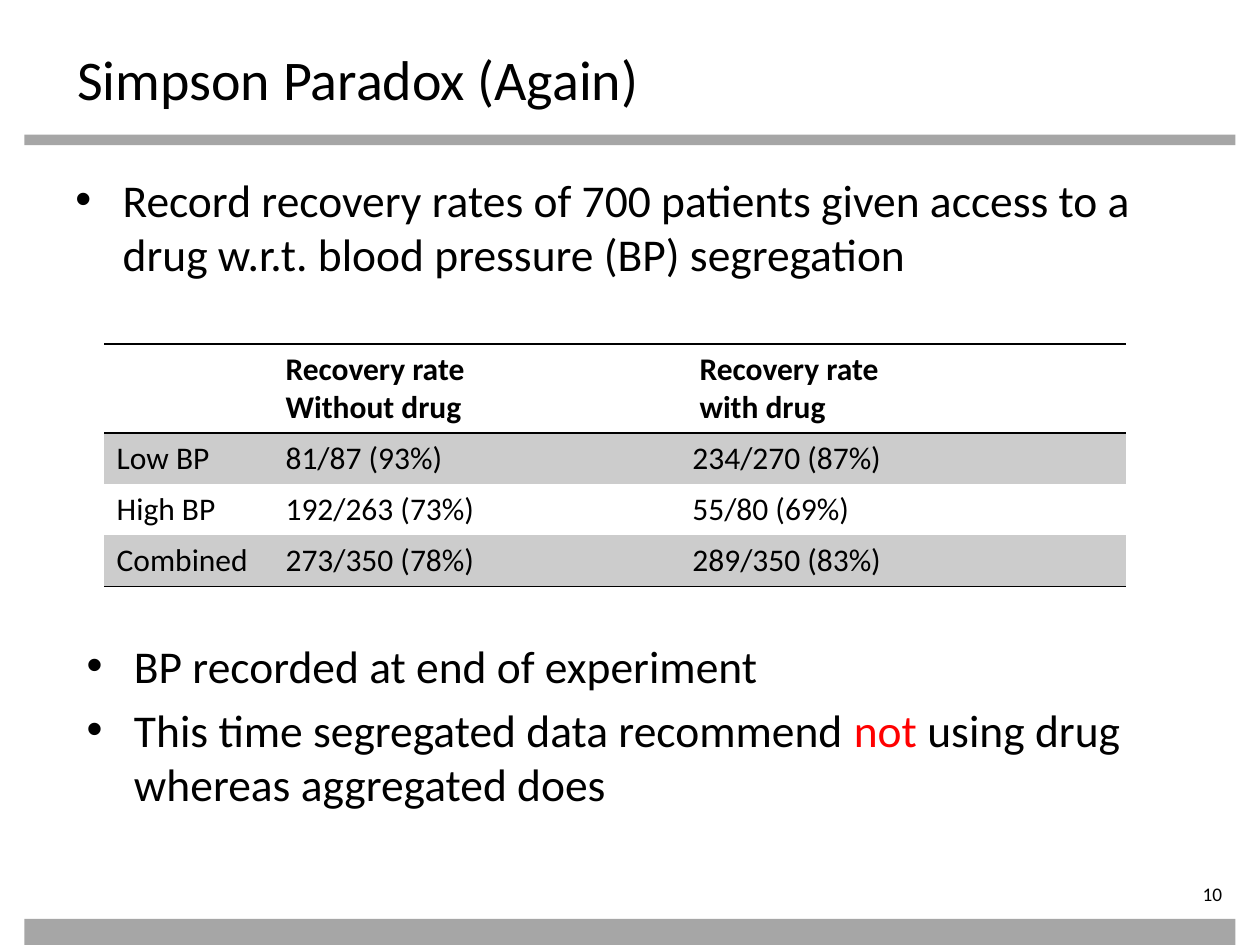
from lxml.etree import SubElement
from pptx import Presentation
from pptx.dml.color import RGBColor
from pptx.enum.shapes import MSO_SHAPE
from pptx.enum.text import PP_ALIGN
from pptx.oxml.ns import qn
from pptx.util import Pt

BLACK = RGBColor(0, 0, 0)
RED = RGBColor(255, 0, 0)
BAR_GRAY = RGBColor(0xA6, 0xA6, 0xA6)
BAND_GRAY = RGBColor(0xCC, 0xCC, 0xCC)
FONT = "Calibri"


def add_run(paragraph, text, size, color=BLACK, bold=False):
    run = paragraph.add_run()
    run.text = text
    run.font.name = FONT
    run.font.size = Pt(size)
    run.font.bold = bold
    run.font.color.rgb = color


def add_text_box(left, top, width, height):
    text_frame = slide.shapes.add_textbox(Pt(left), Pt(top), Pt(width), Pt(height)).text_frame
    text_frame.word_wrap = True
    return text_frame


presentation = Presentation()
presentation.slide_width = Pt(720)
presentation.slide_height = Pt(540)
slide = presentation.slides.add_slide(presentation.slide_layouts[6])

# Gray bars under the title and at the foot
for top, height in [(77, 6), (525, 15)]:
    bar = slide.shapes.add_shape(MSO_SHAPE.RECTANGLE, Pt(14), Pt(top), Pt(692), Pt(height))
    bar.shadow.inherit = False
    bar.fill.solid()
    bar.fill.fore_color.rgb = BAR_GRAY
    bar.line.fill.background()

title = add_text_box(37, 22, 648, 40)
add_run(title.paragraphs[0], "Simpson Paradox (Again)", 32)

# Bulleted text above and below the table
bullet_boxes = [
    (36, 94.5, [
        [("Record recovery rates of 700 patients given access to a drug "
          "w.r.t. blood pressure (BP) segregation", BLACK)],
    ]),
    (42.5, 361, [
        [("BP recorded at end of experiment", BLACK)],
        [("This time segregated data recommend ", BLACK), ("not ", RED),
         ("using drug whereas aggregated does", BLACK)],
    ]),
]
for left, top, bullets in bullet_boxes:
    text_frame = add_text_box(left, top, 648, 102)
    for index, runs in enumerate(bullets):
        paragraph = text_frame.add_paragraph() if index else text_frame.paragraphs[0]
        properties = paragraph._p.get_or_add_pPr()
        properties.set("marL", str(Pt(27)))
        properties.set("indent", str(-Pt(27)))
        SubElement(properties, qn("a:buFont"), typeface="Arial")
        SubElement(properties, qn("a:buChar"), char="•")
        if index:
            paragraph.space_before = Pt(5.2)
        for text, color in runs:
            add_run(paragraph, text, 26, color)

# Recovery table
rows = [
    ["", "Recovery rate\nWithout drug", " Recovery rate\n with drug"],
    ["Low BP", "81/87 (93%)", "234/270 (87%)"],
    ["High BP", "192/263 (73%)", "55/80 (69%)"],
    ["Combined", "273/350 (78%)", "289/350 (83%)"],
]
column_widths = [96.5, 232.5, 255]
row_heights = [51, 29.2, 29.2, 29.2]
frame = slide.shapes.add_table(len(rows), len(column_widths), Pt(59.5), Pt(196.5),
                               Pt(sum(column_widths)), Pt(sum(row_heights)))
table = frame.table
for column, width in zip(table.columns, column_widths):
    column.width = Pt(width)
for row, height in zip(table.rows, row_heights):
    row.height = Pt(height)

ruled_sides = {0: ["a:lnT", "a:lnB"], 1: ["a:lnT"], 3: ["a:lnB"]}
for row_index, row in enumerate(rows):
    for column_index, text in enumerate(row):
        cell = table.cell(row_index, column_index)
        for line_index, line in enumerate(text.split("\n")):
            text_frame = cell.text_frame
            paragraph = text_frame.add_paragraph() if line_index else text_frame.paragraphs[0]
            if line:
                add_run(paragraph, line, 18, bold=row_index == 0)
            else:
                paragraph.font.size = Pt(18)
        cell_properties = cell._tc.get_or_add_tcPr()
        for side in ["a:lnL", "a:lnR", "a:lnT", "a:lnB"]:
            if side in ruled_sides.get(row_index, []):
                border = SubElement(cell_properties, qn(side), w=str(Pt(1)))
                fill = SubElement(border, qn("a:solidFill"))
                SubElement(fill, qn("a:srgbClr"), val=str(BLACK))
            else:
                border = SubElement(cell_properties, qn(side), w="0")
                SubElement(border, qn("a:noFill"))
        if row_index % 2:
            cell.fill.solid()
            cell.fill.fore_color.rgb = BAND_GRAY
        else:
            cell.fill.background()

page_number = add_text_box(626.5, 504, 79, 16)
page_number.margin_left = page_number.margin_top = page_number.margin_bottom = 0
page_number.paragraphs[0].alignment = PP_ALIGN.RIGHT
add_run(page_number.paragraphs[0], "10", 11)

presentation.save("out.pptx")
